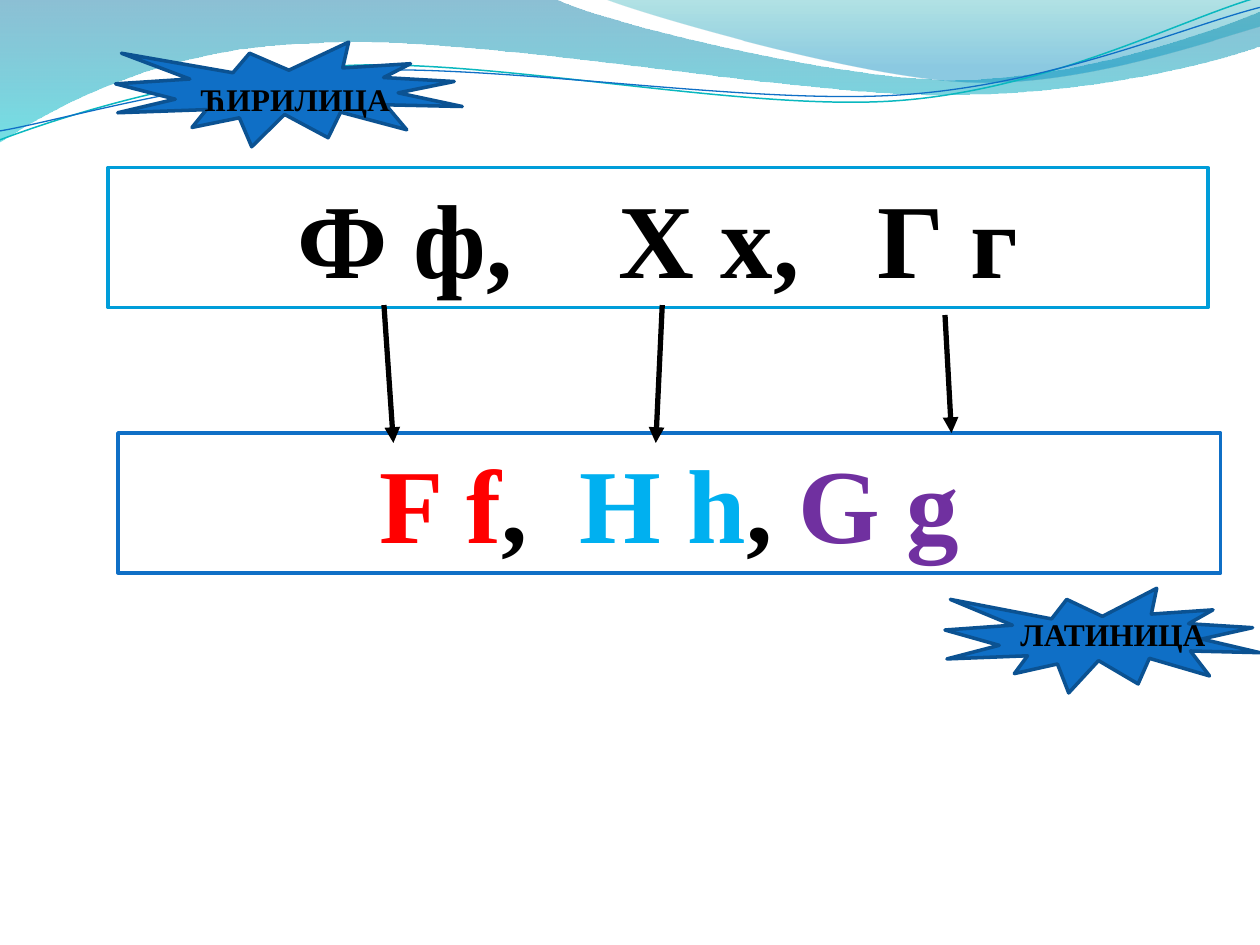
import pptx
import pptx.dml.color
import pptx.enum.shapes
import pptx.enum.text
import pptx.oxml
import pptx.oxml.ns
import pptx.util
from pptx.util import Cm

FONT = "Times New Roman"
BLACK = "000000"

# All positions are in centimetres. In an outline a pair is a straight
# segment, six numbers are a Bezier curve (two controls and the end).
WAVE_BANDS = [
    {"outline": [(0, 0), (11.18, -0.03), (12.09, 0.43, 16.87, 1.6, 19.25, 1.6),
                 (21.67, 1.6, 24.33, 0.66, 25.4, 0.23), (25.43, 0.91),
                 (24.97, 1.12, 22.1, 1.93, 18.95, 1.91),
                 (15.8, 1.91, 9.7, 0.71, 6.53, 0.86),
                 (3.28, 0.91, 1.17, 2.11, -0.03, 2.87)],
     "stops": [(0, "0074A1", 45), (1, "00C6CF", 55)]},
    {"outline": [(12.17, -0.03), (12.93, 0.28, 17.32, 1.57, 19.53, 1.65),
                 (21.74, 1.75, 24.41, 0.81, 25.4, 0.53), (25.4, 0)],
     "stops": [(0, "00A1A9", 30), (0.8, "008BBF", 45)]},
]
WAVE_LINES = [
    {"outline": [(0, 2.82), (1.22, 2.36, 4.01, 1.45, 7.04, 1.32),
                 (10.03, 1.19, 15.06, 2.26, 18.11, 2.03),
                 (21.16, 1.8, 23.83, 0.38, 25.35, -0.05)],
     "color": "0AB8BF", "width": 0.85},
    {"outline": [(0, 2.64), (1.19, 2.44, 4.17, 1.55, 7.19, 1.42),
                 (10.24, 1.3, 15.16, 2.13, 18.21, 1.91),
                 (21.23, 1.7, 23.9, 0.53, 25.4, 0.15)],
     "color": "0F6FC6", "width": 0.75},
]
LETTER_ROWS = [
    {"box": (2.18, 3.38, 22.17, 2.82), "border": "009DD9",
     "indent": 3.81, "tabs": [6.48, 11.7],
     "runs": [("Ф ф,\tХ х,\tГ г", BLACK)]},
    {"box": (2.38, 8.73, 22.23, 2.82), "border": "0F6FC6",
     "indent": 5.28, "tabs": [4.03],
     "runs": [("F f", "FF0000"), (",\t", BLACK), ("H h", "00B0F0"),
              (", ", BLACK), ("G g", "7030A0")]},
]
ARROWS = [(7.74, 6.15, 7.93, 8.93), (13.35, 6.15, 13.22, 8.93),
          (19.05, 6.35, 19.18, 8.73)]
SCRIPT_LABELS = [
    ("ЋИРИЛИЦА", (2.33, 0.85, 6.99, 2.11), (3.81, 1.49, 5.08, 1.02)),
    ("ЛАТИНИЦА", (19.05, 11.86, 6.35, 2.11), (20.32, 12.27, 5.08, 1.02)),
]


def rgb(color):
    return pptx.dml.color.RGBColor.from_string(color)


def add_xml(parent, tag, **attributes):
    element = pptx.oxml.parse_xml(f"<a:{tag} {pptx.oxml.ns.nsdecls('a')}/>")
    for name, value in attributes.items():
        element.set(name, str(value))
    parent.append(element)
    return element


def set_line(shape, color, width):
    shape.line.color.rgb = rgb(color)
    shape.line.width = pptx.util.Pt(width)


def format_run(run, size, color):
    run.font.name = FONT
    run.font.size = pptx.util.Pt(size)
    run.font.bold = True
    run.font.color.rgb = rgb(color)


def add_outline(slide, outline, close):
    """Build the outline from its corner points, then bend the curved segments."""
    corners = [(Cm(segment[-2]), Cm(segment[-1])) for segment in outline]
    builder = slide.shapes.build_freeform(*corners[0])
    builder.add_line_segments(corners[1:], close=False)
    if close:
        builder.add_line_segments([], close=True)
    shape = builder.convert_to_shape()
    shape.shadow.inherit = False
    straight_lines = list(shape._element.iter(pptx.oxml.ns.qn("a:lnTo")))
    for line, segment in zip(straight_lines, outline[1:]):
        if len(segment) == 6:
            curve = add_xml(line.getparent(), "cubicBezTo")
            line.getparent().replace(line, curve)
            for x, y in zip(segment[0::2], segment[1::2]):
                add_xml(curve, "pt", x=Cm(x) - shape.left, y=Cm(y) - shape.top)
    return shape


def add_wave_band(slide, band):
    shape = add_outline(slide, band["outline"], close=True)
    shape.line.fill.background()
    shape.fill.gradient()
    shape.fill.gradient_angle = 270
    for stop, (position, color, _) in zip(shape.fill.gradient_stops, band["stops"]):
        stop.position = position
        stop.color.rgb = rgb(color)
    colors = list(shape._element.spPr.iter(pptx.oxml.ns.qn("a:srgbClr")))
    for element, (_, _, opacity) in zip(colors, band["stops"]):
        add_xml(element, "alpha", val=opacity * 1000)


def add_wave_line(slide, wave):
    shape = add_outline(slide, wave["outline"], close=False)
    shape.fill.background()
    set_line(shape, wave["color"], wave["width"])


def add_preset(slide, kind, box, fill, border):
    shape = slide.shapes.add_shape(kind, *map(Cm, box))
    shape.shadow.inherit = False
    shape.fill.solid()
    shape.fill.fore_color.rgb = rgb(fill)
    set_line(shape, border, 2)
    return shape


def add_letter_row(slide, row):
    shape = add_preset(slide, pptx.enum.shapes.MSO_SHAPE.RECTANGLE,
                       row["box"], "FFFFFF", row["border"])
    frame = shape.text_frame
    frame.vertical_anchor = pptx.enum.text.MSO_ANCHOR.TOP
    frame.margin_left = Cm(row["indent"])
    frame.margin_top = frame.margin_bottom = Cm(0.12)
    paragraph = frame.paragraphs[0]
    paragraph.alignment = pptx.enum.text.PP_ALIGN.LEFT
    tab_list = add_xml(paragraph._p.get_or_add_pPr(), "tabLst")
    for position in row["tabs"]:
        add_xml(tab_list, "tab", pos=Cm(position), algn="l")
    for text, color in row["runs"]:
        run = paragraph.add_run()
        run.text = text
        format_run(run, 60, color)


def add_arrow(slide, ends):
    arrow = slide.shapes.add_connector(
        pptx.enum.shapes.MSO_CONNECTOR.STRAIGHT, *map(Cm, ends))
    set_line(arrow, BLACK, 3)
    add_xml(arrow.line._get_or_add_ln(), "tailEnd", type="triangle")
    add_xml(arrow._element.spPr, "effectLst")


def add_script_label(slide, text, seal_box, text_box):
    add_preset(slide, pptx.enum.shapes.MSO_SHAPE.EXPLOSION1,
               seal_box, "0F6FC6", "0B5292")
    frame = slide.shapes.add_textbox(*map(Cm, text_box)).text_frame
    frame.word_wrap = True
    frame.text = text
    format_run(frame.paragraphs[0].runs[0], 18, BLACK)


def main():
    presentation = pptx.Presentation()
    presentation.slide_width = Cm(25.4)
    presentation.slide_height = Cm(19.05)
    slide = presentation.slides.add_slide(presentation.slide_layouts[6])
    for band in WAVE_BANDS:
        add_wave_band(slide, band)
    for wave in WAVE_LINES:
        add_wave_line(slide, wave)
    for row in LETTER_ROWS:
        add_letter_row(slide, row)
    for ends in ARROWS:
        add_arrow(slide, ends)
    for label in SCRIPT_LABELS:
        add_script_label(slide, *label)
    presentation.save("out.pptx")


if __name__ == "__main__":
    main()
